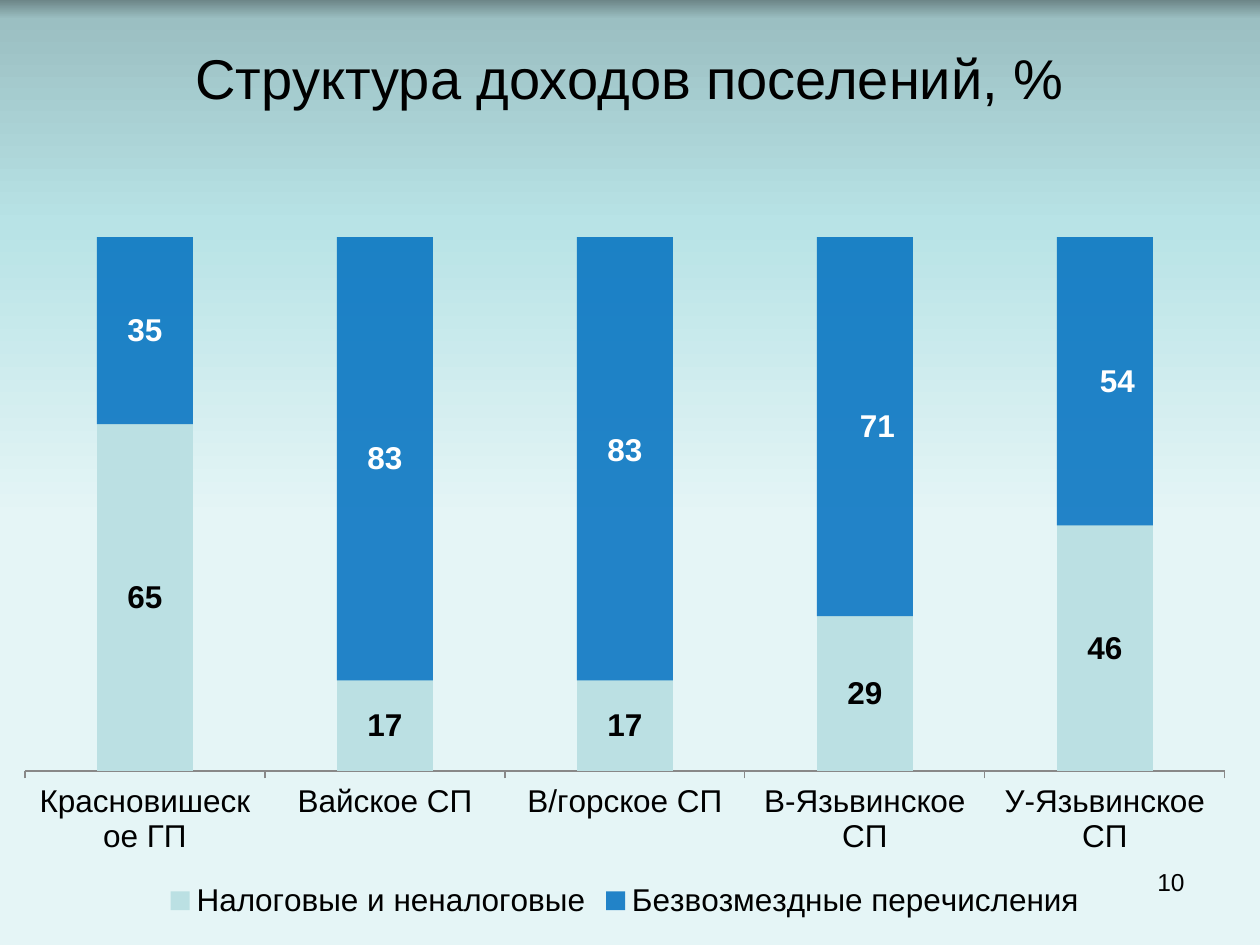
from dataclasses import dataclass

from lxml.etree import SubElement
from pptx import Presentation
from pptx.chart.data import CategoryChartData
from pptx.dml.color import RGBColor
from pptx.enum.chart import XL_CHART_TYPE as ChartType, XL_LEGEND_POSITION as LegendPosition
from pptx.enum.chart import XL_TICK_LABEL_POSITION as LabelPosition, XL_TICK_MARK as TickMark
from pptx.enum.text import MSO_ANCHOR as Anchor, PP_ALIGN as Align
from pptx.oxml import parse_xml
from pptx.oxml.ns import nsdecls, qn
from pptx.util import Inches, Pt


@dataclass(frozen=True)
class Theme:
    font: str = "Arial"
    text: str = "000000"
    light_text: str = "FFFFFF"
    own_income: str = "BBE0E3"
    transfers: str = "0070C0"
    axis: str = "888888"
    title_size: int = 32
    chart_size: int = 18
    number_size: int = 14
    background: tuple = ((0, "6D8688"), (2, "9BBFC2"), (24, "B8E3E6"),
                         (55, "E5F5F6"), (100, "E5F5F6"))


@dataclass(frozen=True)
class IncomeSeries:
    name: str
    values: tuple
    color: str
    label_color: str
    opacity: int = 100


def apply(target, **values):
    for name, value in values.items():
        setattr(target, name, value)


class SlideBuilder:
    def __init__(self, slide, theme):
        self.slide, self.theme = slide, theme

    def style_font(self, font, size, color=None, bold=False):
        apply(font, name=self.theme.font, size=Pt(size), bold=bold)
        font.color.rgb = RGBColor.from_string(color or self.theme.text)

    def background(self):
        stops = "".join(
            f'<a:gs pos="{percent * 1000}"><a:srgbClr val="{color}"/></a:gs>'
            for percent, color in self.theme.background)
        gradient = parse_xml(
            f'<a:gradFill {nsdecls("a")} rotWithShape="1"><a:gsLst>{stops}</a:gsLst>'
            '<a:lin ang="5400000" scaled="0"/></a:gradFill>')
        fill = self.slide.background.fill
        fill.solid()
        solid = self.slide._element.find(".//" + qn("p:bgPr")).find(qn("a:solidFill"))
        solid.getparent().replace(solid, gradient)

    def fill_text(self, frame, text, size, align, anchor):
        apply(frame, text=text, word_wrap=True, vertical_anchor=anchor)
        line = frame.paragraphs[0]
        line.alignment = align
        self.style_font(line.runs[0].font, size)

    def title(self, text, left, top, width, height):
        title = self.slide.shapes.title
        apply(title, left=Inches(left), top=Inches(top),
              width=Inches(width), height=Inches(height))
        self.fill_text(title.text_frame, text, self.theme.title_size,
                       Align.CENTER, Anchor.MIDDLE)

    def page_number(self, text, left, top, width, height):
        box = self.slide.shapes.add_textbox(*map(Inches, (left, top, width, height)))
        self.fill_text(box.text_frame, text, self.theme.number_size, Align.RIGHT, Anchor.TOP)

    def stacked_chart(self, categories, incomes, box, plot_area, label_shifts):
        """Plot area and label shifts are fractions of the chart size."""
        data = CategoryChartData()
        data.categories = categories
        for income in incomes:
            data.add_series(income.name, income.values)
        chart = self.slide.shapes.add_chart(
            ChartType.COLUMN_STACKED, *map(Inches, box), data).chart
        self.style_font(chart.font, self.theme.chart_size)
        apply(chart, has_title=False, has_legend=True)
        apply(chart.legend, position=LegendPosition.BOTTOM, include_in_layout=False)
        apply(chart.value_axis, minimum_scale=0, maximum_scale=100,
              has_major_gridlines=False, visible=False)
        apply(chart.category_axis, major_tick_mark=TickMark.OUTSIDE,
              tick_label_position=LabelPosition.LOW)
        chart.category_axis.format.line.color.rgb = RGBColor.from_string(self.theme.axis)
        plot = chart.plots[0]
        apply(plot, gap_width=150, overlap=100, vary_by_categories=False)
        for series, income in zip(plot.series, incomes):
            self.style_series(series, income)
        for (series_index, point_index), shift in label_shifts.items():
            self.shift_label(plot.series[series_index], point_index, shift,
                             incomes[series_index].label_color)
        self.place_plot(chart, plot_area)

    def style_series(self, series, income):
        fill = series.format.fill
        fill.solid()
        fill.fore_color.rgb = RGBColor.from_string(income.color)
        if income.opacity < 100:
            color = series._element.find(".//" + qn("a:srgbClr"))
            SubElement(color, qn("a:alpha"), val=str(income.opacity * 1000))
        series.data_labels.show_value = True
        self.style_font(series.data_labels.font, self.theme.chart_size,
                        income.label_color, bold=True)

    def shift_label(self, series, point_index, shift, color):
        self.style_font(series.points[point_index].data_label.font,
                        self.theme.chart_size, color, bold=True)
        label = series._element.xpath(f"c:dLbls/c:dLbl[c:idx/@val='{point_index}']")[0]
        for old in label.findall(qn("c:layout")):
            label.remove(old)
        label.find(qn("c:idx")).addnext(self.layout(dict(zip("xy", shift))))

    def place_plot(self, chart, plot_area):
        area = chart._chartSpace.find(".//" + qn("c:plotArea"))
        for old in area.findall(qn("c:layout")):
            area.remove(old)
        area.insert(0, self.layout({"layoutTarget": "inner", "xMode": "edge",
                                    "yMode": "edge", **dict(zip("xywh", plot_area))}))

    @staticmethod
    def layout(values):
        parts = "".join(f'<c:{name} val="{value}"/>' for name, value in values.items())
        return parse_xml(f'<c:layout {nsdecls("c")}><c:manualLayout>{parts}'
                         '</c:manualLayout></c:layout>')


def main():
    theme = Theme()
    deck = Presentation()
    apply(deck, slide_width=Inches(10), slide_height=Inches(7.5))
    builder = SlideBuilder(deck.slides.add_slide(deck.slide_layouts[5]), theme)
    builder.background()
    builder.title("Структура доходов поселений, %", 0.5, 0.3, 9, 0.62)
    settlements = ("Красновишеское ГП", "Вайское СП", "В/горское СП",
                   "В-Язьвинское СП", "У-Язьвинское СП")
    incomes = (
        IncomeSeries("Налоговые и неналоговые", (65, 17, 17, 29, 46),
                     theme.own_income, theme.text),
        IncomeSeries("Безвозмездные перечисления", (35, 83, 83, 71, 54),
                     theme.transfers, theme.light_text, opacity=85),
    )
    builder.stacked_chart(
        settlements, incomes, box=(0, 0.92, 9.92, 6.42),
        plot_area=(0.02, 0.15, 0.96, 0.66),
        label_shifts={(1, 2): (0, -0.01), (1, 3): (0.01, 0), (1, 4): (0.01, 0)})
    builder.page_number("10", 7.17, 6.83, 2.33, 0.52)
    deck.save("out.pptx")


if __name__ == "__main__":
    main()
